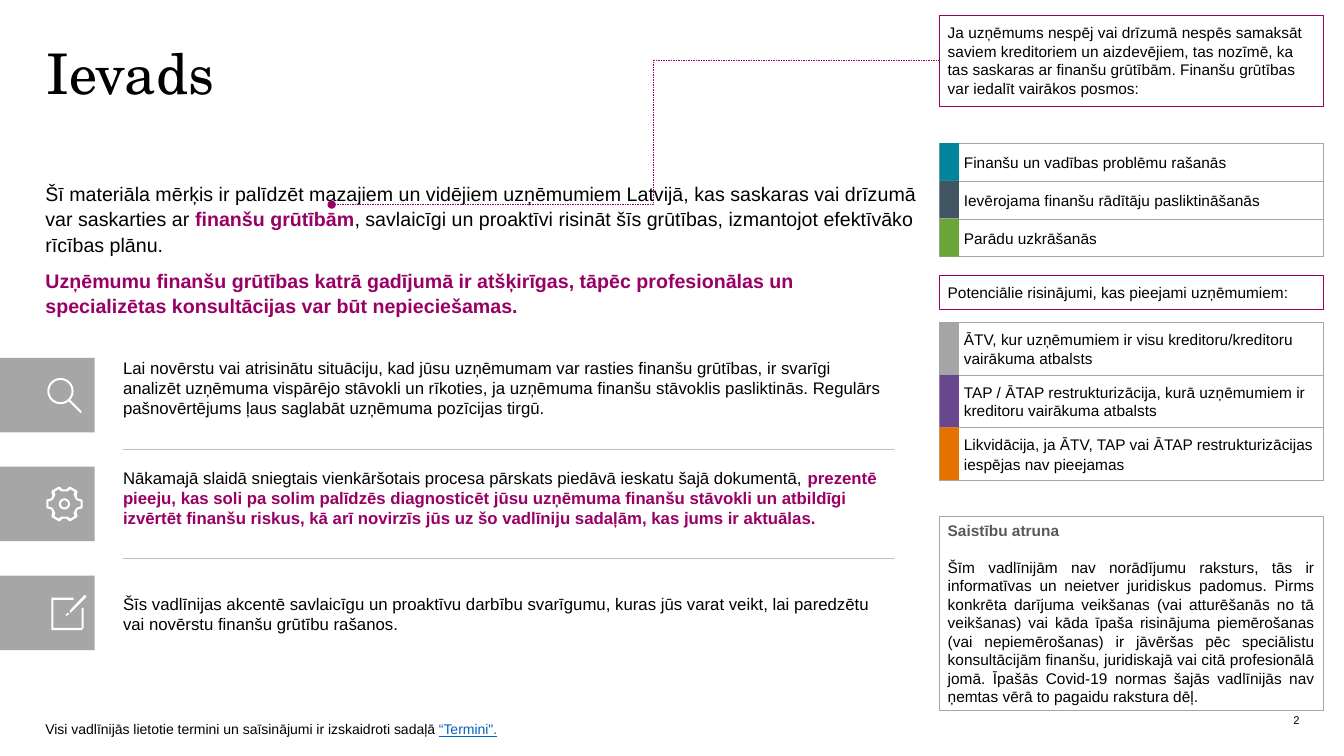
from math import cos, pi, sin

from lxml.etree import SubElement
from pptx import Presentation
from pptx.dml.color import RGBColor
from pptx.enum.dml import MSO_LINE
from pptx.enum.shapes import MSO_CONNECTOR as Connector, MSO_SHAPE as Shape
from pptx.enum.text import MSO_ANCHOR as Anchor, PP_ALIGN as Align
from pptx.oxml.ns import qn
from pptx.util import Inches, Pt

COLORS = {
    "black": "000000", "white": "FFFFFF", "accent": "990066", "link": "0563C1",
    "heading": "595959", "tile": "A6A6A6", "rule": "BFBFBF",
    "teal": "01859C", "slate": "425563", "green": "6BA439",
    "gray": "A5A5A5", "purple": "68478C", "orange": "E57100",
}


def rgb(name):
    return RGBColor.from_string(COLORS[name])


def write(para, spans, size, font="Arial", color="black", bold=False,
          spacing=1.0, after=0, align=Align.LEFT):
    """Fill a paragraph with (text, colour) spans; accent spans are bold."""
    para.alignment, para.line_spacing, para.space_after = align, spacing, Pt(after)
    para.font.name, para.font.size = font, Pt(size)
    para.font.color.rgb, para.font.bold = rgb(color), bold
    for text, tint in spans:
        span = para.add_run()
        span.text = text
        if tint:
            span.font.color.rgb = rgb(tint)
            span.font.bold = tint == "accent"
            span.font.underline = tint == "link"


def set_frame(frame, insets, anchor):
    frame.word_wrap = True
    frame.vertical_anchor = anchor
    sides = [Inches(inset) for inset in insets]
    frame.margin_left, frame.margin_top, frame.margin_right, frame.margin_bottom = sides
    return frame


def add_text(page, box, spans, size, anchor=Anchor.TOP, **style):
    text_box = page.shapes.add_textbox(*map(Inches, box))
    frame = set_frame(text_box.text_frame, (0, 0, 0, 0), anchor)
    write(frame.paragraphs[0], spans, size, **style)
    return frame


def add_block(page, box, fill):
    block = page.shapes.add_shape(Shape.RECTANGLE, *map(Inches, box))
    block.shadow.inherit = False
    block.fill.solid()
    block.fill.fore_color.rgb = rgb(fill)
    block.line.fill.background()
    return block


def add_panel(page, box, outline, insets=(0.08,) * 4, anchor=Anchor.TOP):
    """Translucent white panel with a hairline border."""
    panel = add_block(page, box, "white")
    solid = panel.fill.fore_color._xFill.find(qn("a:srgbClr"))
    SubElement(solid, qn("a:alpha")).set("val", "80000")
    panel.line.color.rgb = rgb(outline)
    panel.line.width = Pt(0.25)
    set_frame(panel.text_frame, insets, anchor)
    return panel


def add_line(page, kind, start, end, color):
    line = page.shapes.add_connector(kind, *map(Inches, (*start, *end)))
    line.line.color.rgb = rgb(color)
    line.line.width = Pt(0.25)
    SubElement(line._element.spPr, qn("a:effectLst"))
    return line


# Icon outlines, relative to the icon centre
def circle(x, y, radius, steps=48):
    angles = [2 * pi * step / steps for step in range(steps)]
    return [(x + radius * cos(a), y + radius * sin(a)) for a in angles]


def mirror(quarter):
    """Complete an outline from its upper right quarter."""
    half = quarter + [(x, -y) for x, y in reversed(quarter)]
    return half + [(-x, -y) for x, y in quarter] + [(-x, y) for x, y in reversed(quarter)]


MAGNIFIER = [
    circle(-0.04, -0.04, 0.13), circle(-0.04, -0.04, 0.11),
    [(0.06, 0.05), (0.17, 0.16), (0.16, 0.18), (0.04, 0.06)],
]
GEAR = [
    mirror([(0, -0.145), (0.02, -0.145), (0.045, -0.17), (0.06, -0.17), (0.12, -0.135),
            (0.13, -0.12), (0.12, -0.08), (0.13, -0.055), (0.17, -0.045), (0.18, -0.035)]),
    mirror([(0, -0.125), (0.03, -0.125), (0.06, -0.145), (0.1, -0.12),
            (0.09, -0.09), (0.11, -0.05), (0.125, -0.035), (0.16, -0.025)]),
    circle(0, 0, 0.055), circle(0, 0, 0.035),
]
NOTE = [
    [(0.17, 0.15), (-0.11, 0.15), (-0.11, -0.13), (0.09, -0.13), (0.09, -0.15),
     (-0.13, -0.15), (-0.13, 0.17), (0.17, 0.17), (0.19, 0.15), (0.19, -0.05), (0.17, -0.05)],
    [(0.01, 0.02), (0.02, 0.03), (0.05, 0.01), (0.03, 0)],
    [(0.2, -0.18), (0.05, -0.02), (0.06, 0), (0.22, -0.16)],
]


def add_icon(page, x, y, outlines):
    placed = [[(Inches(x + dx), Inches(y + dy)) for dx, dy in line] for line in outlines]
    builder = page.shapes.build_freeform(*placed[0][0])
    for number, points in enumerate(placed):
        if number:
            builder.move_to(*points[0])
        builder.add_line_segments(points[1:], close=True)
    icon = builder.convert_to_shape()
    icon.shadow.inherit = False
    icon.fill.solid()
    icon.fill.fore_color.rgb = rgb("white")
    icon.line.fill.background()


def add_intro(page, left, top, width):
    frame = add_text(page, (left, top, width, 1.35), [
        ("Šī materiāla mērķis ir palīdzēt mazajiem un vidējiem uzņēmumiem Latvijā, kas saskaras "
         "vai drīzumā var saskarties ar ", None),
        ("finanšu grūtībām", "accent"),
        (", savlaicīgi un proaktīvi risināt šīs grūtības, izmantojot efektīvāko rīcības plānu.", None),
    ], 14, spacing=1.07, after=8)
    write(frame.add_paragraph(), [
        ("Uzņēmumu finanšu grūtības katrā gadījumā ir atšķirīgas, tāpēc profesionālas un "
         "specializētas konsultācijas var būt nepieciešamas.", None),
    ], 14, color="accent", bold=True, spacing=1.07, after=8)


def add_topics(page, top, pitch):
    """Icon tiles at the left edge, each with its text; rules in between."""
    left, width = 1.22, 7.65
    topics = [
        (MAGNIFIER, 0, 0.61, [
            ("Lai novērstu vai atrisinātu situāciju, kad jūsu uzņēmumam var rasties finanšu grūtības, "
             "ir svarīgi analizēt uzņēmuma vispārējo stāvokli un rīkoties, ja uzņēmuma finanšu stāvoklis "
             "pasliktinās. Regulārs pašnovērtējums ļaus saglabāt uzņēmuma pozīcijas tirgū.", None)]),
        (GEAR, 0.01, 0.61, [
            ("Nākamajā slaidā sniegtais vienkāršotais procesa pārskats piedāvā ieskatu šajā dokumentā, ", None),
            ("prezentē pieeju, kas soli pa solim palīdzēs diagnosticēt jūsu uzņēmuma finanšu stāvokli un "
             "atbildīgi izvērtēt finanšu riskus, kā arī novirzīs jūs uz šo vadlīniju sadaļām, "
             "kas jums ir aktuālas.", "accent")]),
        (NOTE, 0.18, 0.4, [
            ("Šīs vadlīnijas akcentē savlaicīgu un proaktīvu darbību svarīgumu, kuras jūs varat veikt, "
             "lai paredzētu vai novērstu finanšu grūtību rašanos.", None)]),
    ]
    for number, (outlines, drop, height, spans) in enumerate(topics):
        y = top + number * pitch
        add_block(page, (0, y, 0.94, 0.74), "tile")
        add_icon(page, 0.64, y + 0.37, outlines)
        add_text(page, (left, y + drop, width, height), spans, 12, after=8)
        if number:
            add_line(page, Connector.STRAIGHT, (left, y - 0.17), (left + width, y - 0.17), "rule")


def add_callout(page, box, text):
    panel = add_panel(page, box, "accent")
    write(panel.text_frame.paragraphs[0], [(text, None)], 11)
    return panel


def add_stages(page, left, top, width, height, stages):
    """Stacked rows with a coloured swatch at the left."""
    for number, (color, text, spacing) in enumerate(stages):
        y = top + number * height
        panel = add_panel(page, (left, y, width, height), "tile", (0.24, 0.08, 0.08, 0.08), Anchor.MIDDLE)
        write(panel.text_frame.paragraphs[0], [(text, None)], 11, spacing=spacing)
        add_block(page, (left, y, 0.19, height), color)


def add_disclaimer(page, box):
    frame = add_panel(page, box, "tile", (0.08, 0.04, 0.08, 0.04), Anchor.MIDDLE).text_frame
    write(frame.paragraphs[0], [("Saistību atruna", None)], 11, color="heading", bold=True, align=Align.JUSTIFY)
    body = frame.add_paragraph()
    write(body, [
        ("Šīm vadlīnijām nav norādījumu raksturs, tās ir informatīvas un neietver juridiskus padomus. "
         "Pirms konkrēta darījuma veikšanas (vai atturēšanās no tā veikšanas) vai kāda īpaša risinājuma "
         "piemērošanas (vai nepiemērošanas) ir jāvēršas pēc speciālistu konsultācijām finanšu, juridiskajā "
         "vai citā profesionālā jomā. Īpašās Covid-19 normas šajās vadlīnijās nav ņemtas vērā to pagaidu "
         "rakstura dēļ.", None)], 11, align=Align.JUSTIFY)
    body.space_before = Pt(13)


def add_pointer(page, callout, start, end):
    """Dashed elbow from the callout to the highlighted term."""
    pointer = add_line(page, Connector.ELBOW, start, end, "accent")
    pointer.begin_connect(callout, 1)
    pointer.line.dash_style = MSO_LINE.DASH
    SubElement(pointer.line._ln, qn("a:tailEnd")).set("type", "oval")
    guides = pointer._element.spPr.prstGeom.get_or_add_avLst()
    bend = SubElement(guides, qn("a:gd"))
    bend.set("name", "adj1")
    bend.set("fmla", "val 47100")


def add_sidebar(page, left, width):
    callout = add_callout(page, (left, 0.15, width, 0.9), (
        "Ja uzņēmums nespēj vai drīzumā nespēs samaksāt saviem kreditoriem un aizdevējiem, tas nozīmē, "
        "ka tas saskaras ar finanšu grūtībām. Finanšu grūtības var iedalīt vairākos posmos:"))
    add_pointer(page, callout, (left, 0.6), (3.29, 2.03))
    add_stages(page, left, 1.42, width, 0.375, [
        ("teal", "Finanšu un vadības problēmu rašanās", 1.07),
        ("slate", "Ievērojama finanšu rādītāju pasliktināšanās", 1.07),
        ("green", "Parādu uzkrāšanās", 1.07)])
    add_callout(page, (left, 2.73, width, 0.34), "Potenciālie risinājumi, kas pieejami uzņēmumiem:")
    add_stages(page, left, 3.2, width, 0.52, [
        ("gray", "ĀTV, kur uzņēmumiem ir visu kreditoru/kreditoru vairākuma atbalsts", 1.0),
        ("purple", "TAP / ĀTAP restrukturizācija, kurā uzņēmumiem ir kreditoru vairākuma atbalsts", 1.0),
        ("orange", "Likvidācija, ja ĀTV, TAP vai ĀTAP restrukturizācijas iespējas nav pieejamas", 1.07)])
    add_disclaimer(page, (left, 5.12, width, 1.93))


def add_footer(page, left, top):
    add_text(page, (left, top, 8.43, 0.17), [
        ("Visi vadlīnijās lietotie termini un saīsinājumi ir izskaidroti sadaļā ", None),
        ("“Termini\".", "link")], 10, spacing=1.07)
    add_text(page, (9.89, top - 0.06, 3, 0.13), [("2", None)], 8, Anchor.MIDDLE, align=Align.RIGHT)


def main():
    deck = Presentation()
    deck.slide_width, deck.slide_height = Inches(13.33), Inches(7.5)
    page = deck.slides.add_slide(deck.slide_layouts[6])
    add_text(page, (0.46, 0.36, 8.6, 0.8), [("Ievads", None)], 40, Anchor.MIDDLE,
             font="TeX Gyre Schola", spacing=0.9)
    add_intro(page, 0.45, 1.79, 8.65)
    add_topics(page, 3.55, 1.08)
    add_sidebar(page, 9.32, 3.8)
    add_footer(page, 0.45, 7.14)
    deck.save("out.pptx")


if __name__ == "__main__":
    main()
